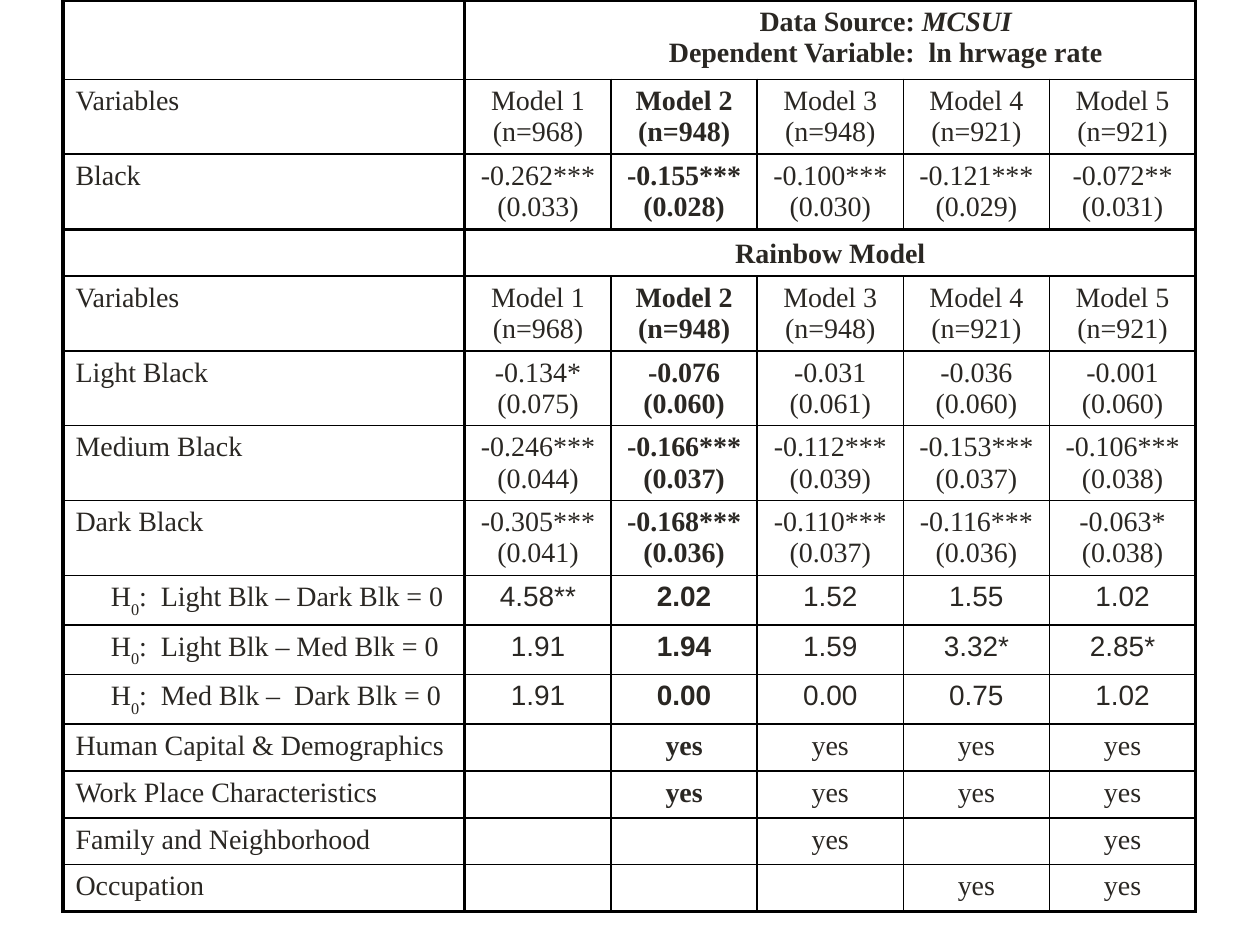
from lxml.etree import SubElement
from pptx import Presentation
from pptx.dml.color import RGBColor
from pptx.enum.text import MSO_ANCHOR, PP_ALIGN
from pptx.oxml.ns import qn
from pptx.util import Inches, Pt

INK = RGBColor(0x2A, 0x27, 0x23)
RULE = RGBColor(0, 0, 0)
SERIF, SANS = "Times New Roman", "Arial"
SIZE = 16
THIN, THICK = 1, 2

LABEL_WIDTH, MODEL_WIDTH = 3.19, 1.16
HEADER_HEIGHT, DOUBLE, TEST, SINGLE = 0.63, 0.59, 0.39, 0.34
BOLD_COLUMN = 2

MODELS = ("Variables", DOUBLE, [
    "Model 1\n(n=968)", "Model 2\n(n=948)", "Model 3\n(n=948)",
    "Model 4\n(n=921)", "Model 5\n(n=921)"])

# label, row height, one entry per model
ROWS = [
    ("", HEADER_HEIGHT, []),
    MODELS,
    ("Black", DOUBLE, ["-0.262***\n(0.033)", "-0.155***\n(0.028)", "-0.100***\n(0.030)",
                       "-0.121***\n(0.029)", "-0.072**\n(0.031)"]),
    ("", SINGLE, []),
    MODELS,
    ("Light Black", DOUBLE, ["-0.134*\n(0.075)", "-0.076\n(0.060)", "-0.031\n(0.061)",
                             "-0.036\n(0.060)", "-0.001\n(0.060)"]),
    ("Medium Black", DOUBLE, ["-0.246***\n(0.044)", "-0.166***\n(0.037)", "-0.112***\n(0.039)",
                              "-0.153***\n(0.037)", "-0.106***\n(0.038)"]),
    ("Dark Black", DOUBLE, ["-0.305***\n(0.041)", "-0.168***\n(0.036)", "-0.110***\n(0.037)",
                            "-0.116***\n(0.036)", "-0.063*\n(0.038)"]),
    (":  Light Blk – Dark Blk = 0", TEST, ["4.58**", "2.02", "1.52", "1.55", "1.02"]),
    (":  Light Blk – Med Blk = 0", TEST, ["1.91", "1.94", "1.59", "3.32*", "2.85*"]),
    (":  Med Blk –  Dark Blk = 0", TEST, ["1.91", "0.00", "0.00", "0.75", "1.02"]),
    ("Human Capital & Demographics", SINGLE, ["", "yes", "yes", "yes", "yes"]),
    ("Work Place Characteristics", SINGLE, ["", "yes", "yes", "yes", "yes"]),
    ("Family and Neighborhood", SINGLE, ["", "", "yes", "", "yes"]),
    ("Occupation", SINGLE, ["", "", "", "yes", "yes"]),
]
SOURCE_ROW, BLACK_ROW, RAINBOW_ROW = 0, 2, 3
BANNER_ROWS = (SOURCE_ROW, RAINBOW_ROW)
LAST_ROW, LAST_COLUMN = len(ROWS) - 1, 5


def add_text(p, text, font=SERIF, bold=False, italic=False, baseline=0):
    r = p.add_run()
    r.text = text
    r.font.name, r.font.size = font, Pt(SIZE)
    r.font.bold, r.font.italic = bold, italic
    r.font.color.rgb = INK
    if baseline:
        r.font._element.set("baseline", str(baseline * 1000))


def indent(p, **lengths):
    """Set marL and indent of a paragraph, in inches."""
    for name, length in lengths.items():
        p._p.get_or_add_pPr().set(name, str(Inches(length)))


def add_lines(cell, text, **fmt):
    """Write centred lines, one paragraph each."""
    tf = cell.text_frame
    for i, line in enumerate(text.split("\n")):
        p = tf.add_paragraph() if i else tf.paragraphs[0]
        p.alignment = PP_ALIGN.CENTER
        add_text(p, line, **fmt)


def add_label(cell, text, is_test):
    p = cell.text_frame.paragraphs[0]
    if is_test:
        indent(p, marL=0.28, indent=0)
        add_text(p, "H")
        add_text(p, "0", baseline=-30)
    add_text(p, text)


def add_banners(table):
    for row in BANNER_ROWS:
        table.cell(row, 1).merge(table.cell(row, LAST_COLUMN))
    source = table.cell(SOURCE_ROW, 1)
    add_lines(source, "Data Source: \nDependent Variable:  ln hrwage rate", bold=True)
    add_text(source.text_frame.paragraphs[0], "MCSUI", bold=True, italic=True)
    for p in source.text_frame.paragraphs:
        indent(p, marL=0, indent=0.88)
    rainbow = table.cell(RAINBOW_ROW, 1)
    rainbow.vertical_anchor = MSO_ANCHOR.BOTTOM
    add_lines(rainbow, "Rainbow Model", bold=True)


def set_borders(cell, row, column):
    thick = {
        "L": column <= 1,
        "R": column in (0, LAST_COLUMN) or row in BANNER_ROWS,
        "T": row in (SOURCE_ROW, RAINBOW_ROW),
        "B": row in (BLACK_ROW, LAST_ROW),
    }
    tcPr = cell._tc.get_or_add_tcPr()
    for side, is_thick in thick.items():
        ln = SubElement(tcPr, qn(f"a:ln{side}"), w=str(Pt(THICK if is_thick else THIN)))
        SubElement(SubElement(ln, qn("a:solidFill")), qn("a:srgbClr"), val=str(RULE))


def style_cell(cell, row, column):
    set_borders(cell, row, column)
    cell.fill.background()
    for p in cell.text_frame.paragraphs:
        if not p.runs:
            SubElement(p._p, qn("a:endParaRPr"), sz=str(SIZE * 100))


def add_regression_table(s):
    height = sum(row[1] for row in ROWS)
    width = LABEL_WIDTH + LAST_COLUMN * MODEL_WIDTH
    table = s.shapes.add_table(len(ROWS), LAST_COLUMN + 1, Inches(0.5), 0,
                               Inches(width), Inches(height)).table
    table.first_row = table.horz_banding = False
    for i, column in enumerate(table.columns):
        column.width = Inches(MODEL_WIDTH if i else LABEL_WIDTH)
    add_banners(table)
    for row, (label, row_height, values) in enumerate(ROWS):
        table.rows[row].height = Inches(row_height)
        is_test = row_height == TEST
        if label:
            add_label(table.cell(row, 0), label, is_test)
        for column, value in enumerate(values, 1):
            if value:
                add_lines(table.cell(row, column), value, bold=column == BOLD_COLUMN,
                          font=SANS if is_test else SERIF)
        for column in range(LAST_COLUMN + 1):
            style_cell(table.cell(row, column), row, column)


def main():
    prs = Presentation()
    prs.slide_width, prs.slide_height = Inches(10), Inches(7.5)
    s = prs.slides.add_slide(prs.slide_layouts[6])
    add_regression_table(s)
    prs.save("out.pptx")


if __name__ == "__main__":
    main()
